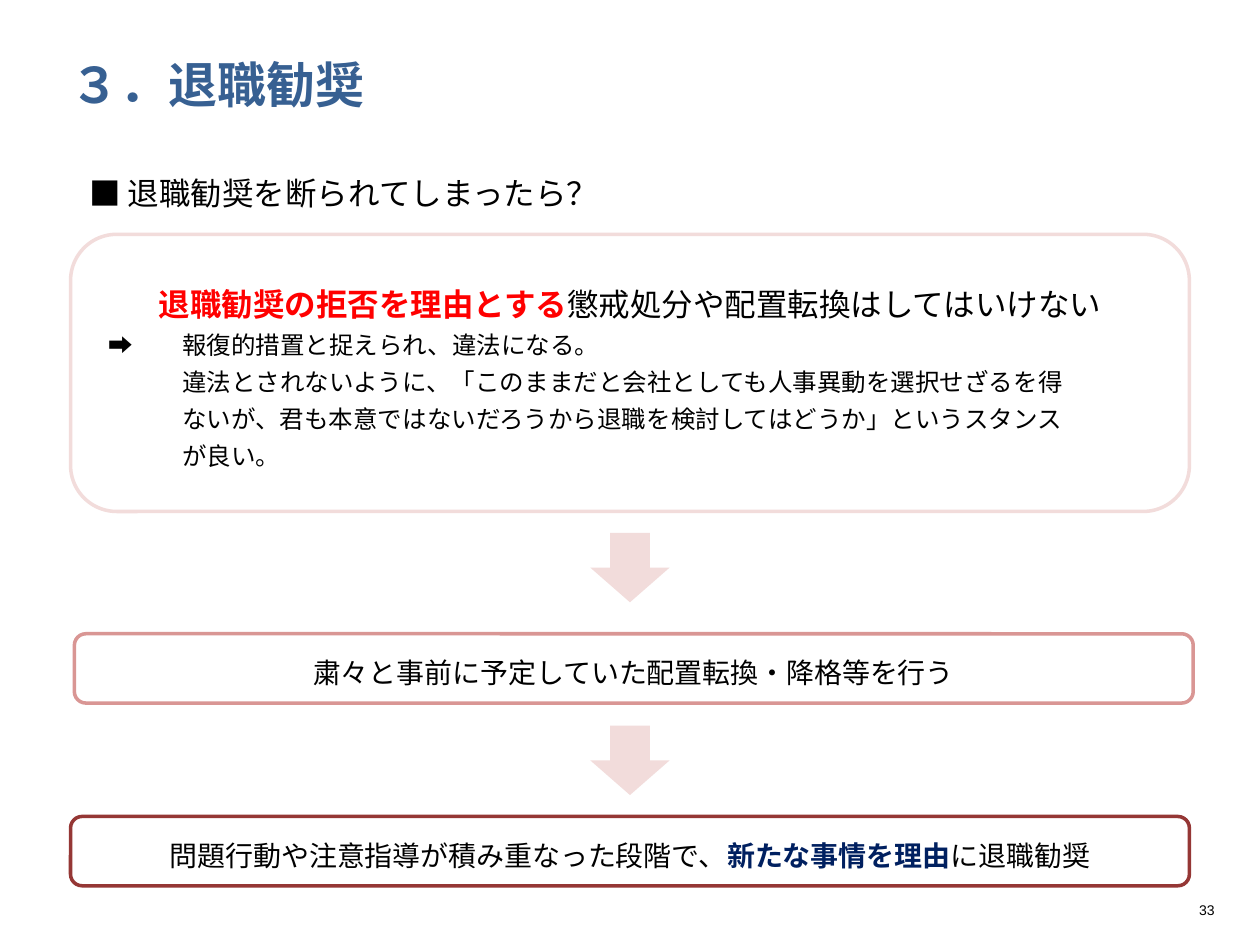
from dataclasses import dataclass

from lxml.etree import SubElement
from pptx import Presentation
from pptx.dml.color import RGBColor
from pptx.enum.shapes import MSO_SHAPE
from pptx.enum.text import MSO_ANCHOR, PP_ALIGN
from pptx.oxml.ns import qn
from pptx.util import Inches, Pt


@dataclass(frozen=True)
class Theme:
    japanese: str = "Noto Sans CJK JP"
    latin: str = "Arial"
    title: str = "376092"
    ink: str = "000000"
    warning: str = "FF0000"
    reason: str = "002060"
    paper: str = "FFFFFF"
    pale: str = "F2DCDB"
    rose: str = "D99694"
    wine: str = "953735"
    title_size: int = 28
    lead_size: int = 18
    step_size: int = 16
    body_size: int = 14
    number_size: int = 8
    spacing: float = 1.25


theme = Theme()


def prepare(frame, anchor):
    frame.margin_left = frame.margin_right = 0
    frame.margin_top = frame.margin_bottom = 0
    frame.word_wrap = True
    frame.vertical_anchor = anchor
    return frame.paragraphs[0]


def add_run(paragraph, text, size, color=theme.ink, bold=False, face=theme.japanese):
    run = paragraph.add_run()
    run.text = text
    run.font.size = Pt(size)
    run.font.bold = bold
    run.font.color.rgb = RGBColor.from_string(color)
    run.font.name = face
    SubElement(run.font._element, qn("a:ea")).set("typeface", face)


deck = Presentation()
deck.slide_width, deck.slide_height = Inches(10), Inches(7.5)
slide = deck.slides.add_slide(deck.slide_layouts[5])
shapes = slide.shapes

left = Inches(0.56)
width = deck.slide_width - 2 * left
row = Inches(0.55)

title = shapes.title
title.left, title.top, title.width, title.height = left, Inches(0.47), width, Inches(0.43)
heading = prepare(title.text_frame, MSO_ANCHOR.BOTTOM)
heading.alignment = PP_ALIGN.LEFT
add_run(heading, "３．退職勧奨", theme.title_size, theme.title, True)

question = shapes.add_textbox(Inches(0.71), Inches(1.31), Inches(8.63), Inches(0.43))
asked = prepare(question.text_frame, MSO_ANCHOR.TOP)
asked.line_spacing = theme.spacing
add_run(asked, "■ 退職勧奨を断られてしまったら？", theme.lead_size)

steps = [
    (left, 1.86, 4 * row, theme.pale, theme.lead_size, [
        ("退職勧奨の拒否を理由とする", theme.warning, True),
        ("懲戒処分や配置転換はしてはいけない", theme.ink, False),
    ]),
    (Inches(0.59), 5.03, row, theme.rose, theme.step_size, [
        ("粛々と事前に予定していた配置転換・降格等を行う", theme.ink, False),
    ]),
    (left, 6.48, row, theme.wine, theme.step_size, [
        ("問題行動や注意指導が積み重なった段階で、", theme.ink, False),
        ("新たな事情を理由", theme.reason, True),
        ("に退職勧奨", theme.ink, False),
    ]),
]
frames = []
for step_left, top, height, outline, size, wording in steps:
    step = shapes.add_shape(MSO_SHAPE.ROUNDED_RECTANGLE, step_left, Inches(top), width, height)
    step.shadow.inherit = False
    step.fill.solid()
    step.fill.fore_color.rgb = RGBColor.from_string(theme.paper)
    step.line.color.rgb = RGBColor.from_string(outline)
    step.line.width = Pt(2)
    message = prepare(step.text_frame, MSO_ANCHOR.MIDDLE)
    message.alignment = PP_ALIGN.CENTER
    message.line_spacing = theme.spacing
    for text, color, bold in wording:
        add_run(message, text, size, color, bold)
    frames.append(step.text_frame)

em = Pt(theme.body_size)
advice = [
    "➡\t報復的措置と捉えられ、違法になる。",
    "違法とされないように、「このままだと会社としても人事異動を選択せざるを得",
    "ないが、君も本意ではないだろうから退職を検討してはどうか」というスタンス",
    "が良い。",
]
for number, text in enumerate(advice):
    line = frames[0].add_paragraph()
    line.alignment = PP_ALIGN.JUSTIFY
    line.line_spacing = theme.spacing
    properties = line._p.get_or_add_pPr()
    properties.set("marL", str(4 * em))
    properties.set("indent", str(0 if number else -3 * em))
    add_run(line, text, theme.body_size)

arrow_width = Inches(0.63)
for top in (4.23, 5.76):
    arrow = shapes.add_shape(
        MSO_SHAPE.DOWN_ARROW, (deck.slide_width - arrow_width) // 2, Inches(top), arrow_width, row
    )
    arrow.shadow.inherit = False
    arrow.fill.solid()
    arrow.fill.fore_color.rgb = RGBColor.from_string(theme.pale)
    arrow.line.fill.background()

page_number = shapes.add_textbox(Inches(9.35), Inches(7.11), Inches(0.29), Inches(0.22))
page = prepare(page_number.text_frame, MSO_ANCHOR.MIDDLE)
page.alignment = PP_ALIGN.RIGHT
add_run(page, "33", theme.number_size, face=theme.latin)

deck.save("out.pptx")
